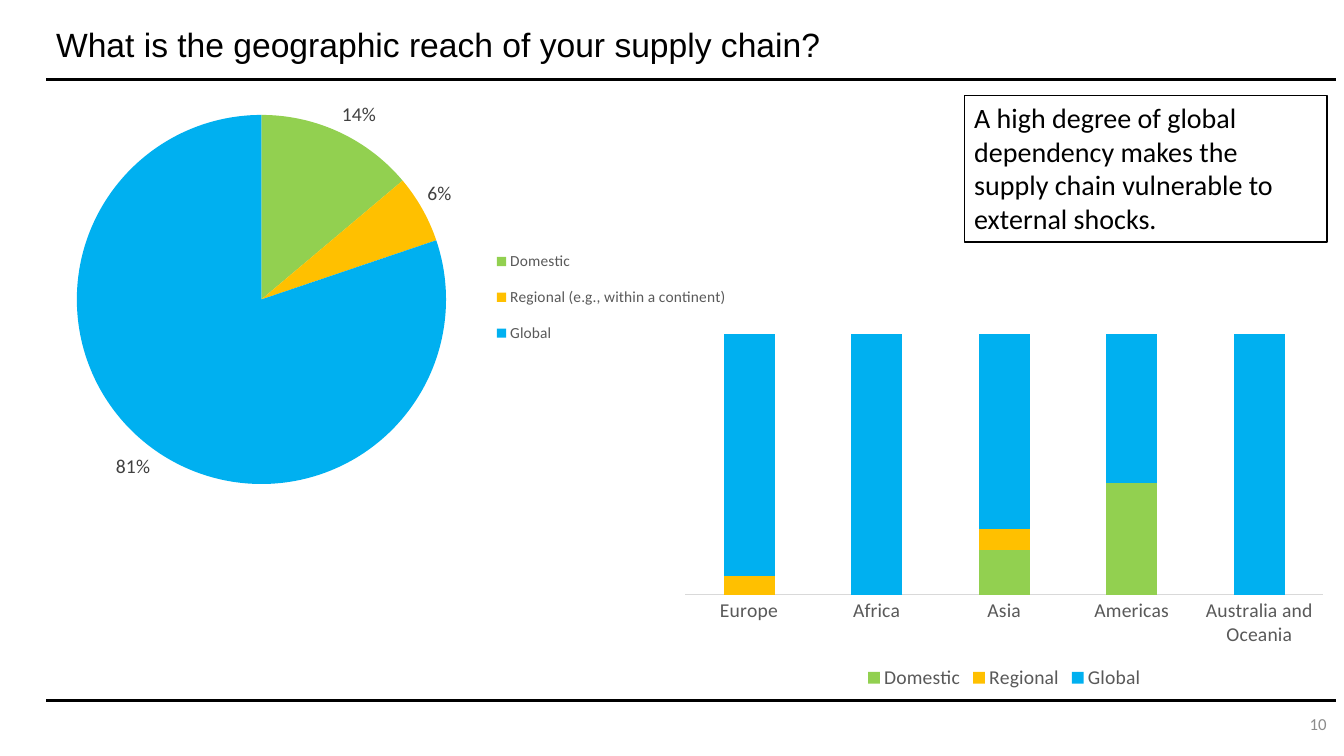
from lxml.etree import SubElement
from pptx import Presentation
from pptx.chart.data import CategoryChartData as Data
from pptx.dml.color import RGBColor
from pptx.enum.chart import XL_CHART_TYPE as Kind
from pptx.enum.chart import XL_LABEL_POSITION as Spot
from pptx.enum.chart import XL_LEGEND_POSITION as Side
from pptx.enum.chart import XL_TICK_MARK as Tick
from pptx.enum.shapes import MSO_CONNECTOR as Link
from pptx.enum.shapes import MSO_SHAPE as Form
from pptx.enum.text import MSO_ANCHOR as Anchor
from pptx.enum.text import MSO_AUTO_SIZE as Fit
from pptx.enum.text import PP_ALIGN as Align
from pptx.oxml.ns import qn
from pptx.util import Inches, Pt

BLACK = RGBColor(0x00, 0x00, 0x00)
WHITE = RGBColor(0xFF, 0xFF, 0xFF)
DARK = RGBColor(0x40, 0x40, 0x40)
GREY = RGBColor(0x59, 0x59, 0x59)
PALE = RGBColor(0x8C, 0x8C, 0x8C)
RULE = RGBColor(0xD9, 0xD9, 0xD9)
GREEN = RGBColor(0x92, 0xD0, 0x50)
AMBER = RGBColor(0xFF, 0xC0, 0x00)
BLUE = RGBColor(0x00, 0xB0, 0xF0)
REACH = (GREEN, AMBER, BLUE)

WIDE, HIGH = Inches(13.33), Inches(7.5)
COLS, ROWS = 160, 90
LEFT, RIGHT = 5.5, 159.1

REGIONS = ("Europe", "Africa", "Asia", "Americas", "Australia and Oceania")
SHARES = {
    "Domestic": (0, 0, 17, 43, 0),
    "Regional": (7, 0, 8, 0, 0),
    "Global": (93, 100, 75, 57, 100),
}
TOTALS = {
    "Domestic": 0.14,
    "Regional (e.g., within a continent)": 0.06,
    "Global": 0.81,
}


def grid(col, row, cols, rows):
    """Turn grid columns and rows into slide lengths."""
    return (int(WIDE * col / COLS), int(HIGH * row / ROWS),
            int(WIDE * cols / COLS), int(HIGH * rows / ROWS))


def style(font, size, color, name="Calibri"):
    font.size, font.name = Pt(size), name
    font.color.rgb = color


def paint(part, color):
    part.format.fill.solid()
    part.format.fill.fore_color.rgb = color


def add_rule(slide, row):
    x, y, width, _ = grid(LEFT, row, RIGHT - LEFT, 0)
    rule = slide.shapes.add_connector(Link.STRAIGHT, x, y, x + width, y)
    rule.line.color.rgb = BLACK
    rule.line.width = Pt(0)
    SubElement(rule._element.spPr, qn("a:effectLst"))


def add_text(slide, text, box, size, color, name="Calibri", align=Align.LEFT):
    frame = slide.shapes.add_textbox(*box).text_frame
    frame.word_wrap = True
    frame.vertical_anchor = Anchor.MIDDLE
    line = frame.paragraphs[0]
    line.text, line.alignment = text, align
    style(line.font, size, color, name)
    return line


def add_note(slide, text, box):
    note = slide.shapes.add_shape(Form.RECTANGLE, *box)
    note.shadow.inherit = False
    note.fill.solid()
    note.fill.fore_color.rgb = WHITE
    note.line.color.rgb = BLACK
    note.line.width = Pt(1)
    frame = note.text_frame
    frame.word_wrap = True
    frame.auto_size = Fit.SHAPE_TO_FIT_TEXT
    frame.vertical_anchor = Anchor.TOP
    line = frame.paragraphs[0]
    line.text, line.alignment = text, Align.LEFT
    style(line.font, 20, BLACK)


def place(part, index, inner, **shares):
    """Fix a chart part at shares of the chart's size."""
    for old in part.findall(qn("c:layout")):
        part.remove(old)
    layout = part.makeelement(qn("c:layout"))
    part.insert(index, layout)
    manual = SubElement(layout, qn("c:manualLayout"))
    if inner:
        SubElement(manual, qn("c:layoutTarget"), val="inner")
    for mode in ("xMode", "yMode"):
        SubElement(manual, qn("c:" + mode), val="edge")
    for key, share in shares.items():
        SubElement(manual, qn("c:" + key), val=str(share))


def add_chart(slide, kind, data, box, size, side, **plot):
    chart = slide.shapes.add_chart(kind, *box, data).chart
    chart.has_title = False
    style(chart.font, size, BLACK)
    chart.has_legend = True
    chart.legend.position = side
    chart.legend.include_in_layout = False
    area = chart._chartSpace.chart.plotArea
    place(area, 0, True, **plot)
    return chart


def add_bars(slide, box):
    data = Data(number_format="General")
    data.categories = REGIONS
    for name, values in SHARES.items():
        data.add_series(name, values)
    chart = add_chart(slide, Kind.COLUMN_STACKED, data, box, 14, Side.BOTTOM,
                      x=0.02, y=0.02, w=0.96, h=0.71)
    style(chart.legend.font, 14, GREY)
    plot = chart.plots[0]
    plot.gap_width, plot.overlap = 150, 100
    plot.vary_by_categories = False
    for series, color in zip(plot.series, REACH):
        paint(series, color)
    base = chart.category_axis
    base.major_tick_mark = base.minor_tick_mark = Tick.NONE
    base.format.line.color.rgb = RULE
    base.format.line.width = Pt(0.75)
    style(base.tick_labels.font, 14, GREY)
    scale = chart.value_axis
    scale.minimum_scale, scale.maximum_scale = 0, 100
    scale.major_unit = 20
    scale.has_major_gridlines = False
    scale.visible = False


def add_pie(slide, box):
    data = Data(number_format="0%")
    data.categories = list(TOTALS)
    data.add_series("Series 1", list(TOTALS.values()))
    chart = add_chart(slide, Kind.PIE, data, box, 10, Side.RIGHT,
                      x=0.04, y=0.08, w=0.54, h=0.86)
    style(chart.legend.font, 11, GREY)
    place(chart.legend._element, 1, False, x=0.64, y=0.36, w=0.36, h=0.29)
    plot = chart.plots[0]
    plot.vary_by_categories = True
    series = plot.series[0]
    for index, color in enumerate(REACH):
        paint(series.points[index], color)
    labels = series.data_labels
    labels.show_value = True
    labels.show_percentage = False
    labels.number_format = "0%"
    labels.number_format_is_linked = False
    labels.position = Spot.OUTSIDE_END
    style(labels.font, 14, DARK)


def main():
    deck = Presentation()
    deck.slide_width, deck.slide_height = WIDE, HIGH
    slide = deck.slides.add_slide(deck.slide_layouts[6])
    for row in (9.5, 83.4):
        add_rule(slide, row)
    add_text(slide, "10", grid(113, 84.2, 46.1, 4), 12, PALE,
             align=Align.RIGHT)
    title = add_text(slide, "What is the geographic reach of your supply chain?",
                     grid(LEFT, 2.3, 120.4, 6.5), 24, BLACK, "Arial")
    title.line_spacing = 0.9
    add_bars(slide, grid(80, 38.9, 79.1, 43.7))
    add_note(slide, "A high degree of global dependency makes the supply "
             "chain vulnerable to external shocks.",
             grid(114.8, 11.4, 43.2, 17.4))
    add_pie(slide, grid(5.8, 9.6, 81.7, 51.1))
    deck.save("out.pptx")


if __name__ == "__main__":
    main()
